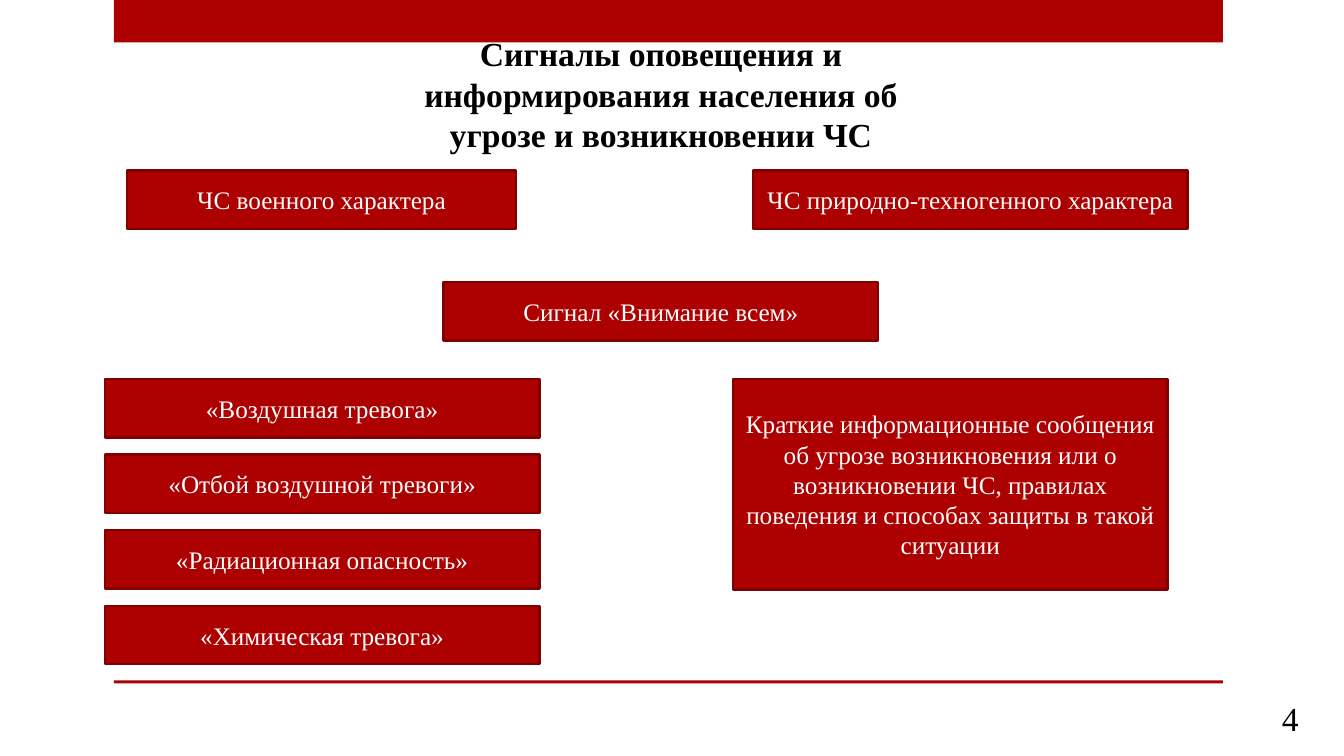
from pptx import Presentation
from pptx.dml.color import RGBColor
from pptx.enum.shapes import MSO_SHAPE as SHAPE
from pptx.enum.text import MSO_ANCHOR as ANCHOR, MSO_AUTO_SIZE as AUTO, PP_ALIGN as ALIGN
from pptx.util import Pt

PX = 9144  # EMU per px, 100 px to the inch
FONT = "Times New Roman"
RED = RGBColor(0xAD, 0x01, 0x01)
DARK_RED = RGBColor(0x80, 0x01, 0x01)
BLACK = RGBColor(0, 0, 0)
WHITE = RGBColor(0xFF, 0xFF, 0xFF)

TITLE_FONT = dict(name=FONT, size=Pt(24), bold=True)
BOX_FONT = dict(name=FONT, size=Pt(18))
NUMBER_FONT = dict(name=FONT, size=Pt(24))

BOX_W, BOX_H = 431, 58
ALARM_X, ALARM_Y, ALARM_STEP = 104, 376, 75
ALARMS = [
    "«Воздушная тревога»",
    "«Отбой воздушной тревоги»",
    "«Радиационная опасность»",
    "«Химическая тревога»",
]


def emu(*lengths):
    return [n * PX for n in lengths]


def write(sp, text, font, color, align=ALIGN.CENTER, anchor=ANCHOR.MIDDLE):
    tf = sp.text_frame
    frame = dict(word_wrap=True, auto_size=AUTO.NONE, vertical_anchor=anchor)
    for key, value in frame.items():
        setattr(tf, key, value)
    p = tf.paragraphs[0]
    p.alignment = align
    r = p.add_run()
    r.text = text
    for key, value in font.items():
        setattr(r.font, key, value)
    r.font.color.rgb = color


def add_bar(s, x, y, w, h):
    sp = s.shapes.add_shape(SHAPE.RECTANGLE, *emu(x, y, w, h))
    sp.shadow.inherit = False
    sp.fill.solid()
    sp.fill.fore_color.rgb = RED
    sp.line.fill.background()
    return sp


def add_box(s, text, x, y, w=BOX_W, h=BOX_H):
    sp = add_bar(s, x, y, w, h)
    sp.line.color.rgb = DARK_RED
    sp.line.width = Pt(1.75)
    write(sp, text, BOX_FONT, WHITE)


def set_title(s, text, x, y, w, h):
    sp = s.shapes.title
    sp.left, sp.top, sp.width, sp.height = emu(x, y, w, h)
    write(sp, text, TITLE_FONT, BLACK, anchor=ANCHOR.TOP)


def add_number(s, text, x, y, w, h):
    sp = s.shapes.add_textbox(*emu(x, y, w, h))
    write(sp, text, NUMBER_FONT, BLACK, align=ALIGN.RIGHT)


def main():
    prs = Presentation()
    prs.slide_width, prs.slide_height = emu(1333, 750)
    s = prs.slides.add_slide(prs.slide_layouts[5])

    # Frame bars, title and page number
    add_bar(s, 113, 0, 1100, 42)
    add_bar(s, 113, 675, 1100, 3)
    set_title(s, "Сигналы оповещения и информирования населения об угрозе "
                 "и возникновении ЧС", 384, 28, 543, 131)
    add_number(s, "4", 1223, 692, 75, 40)

    # Kinds of emergency and the common signal
    add_box(s, "ЧС военного характера", 126, 169, w=386)
    add_box(s, "ЧС природно-техногенного характера", 747, 169)
    add_box(s, "Сигнал «Внимание всем»", 440, 280)

    # Wartime alarms
    for i, alarm in enumerate(ALARMS):
        add_box(s, alarm, ALARM_X, ALARM_Y + i * ALARM_STEP)

    # Messages for natural and man-made emergencies
    add_box(s, "Краткие информационные сообщения об угрозе возникновения или "
               "о возникновении ЧС, правилах поведения и способах защиты "
               "в такой ситуации", 727, ALARM_Y, h=209)

    prs.save("out.pptx")


if __name__ == "__main__":
    main()
